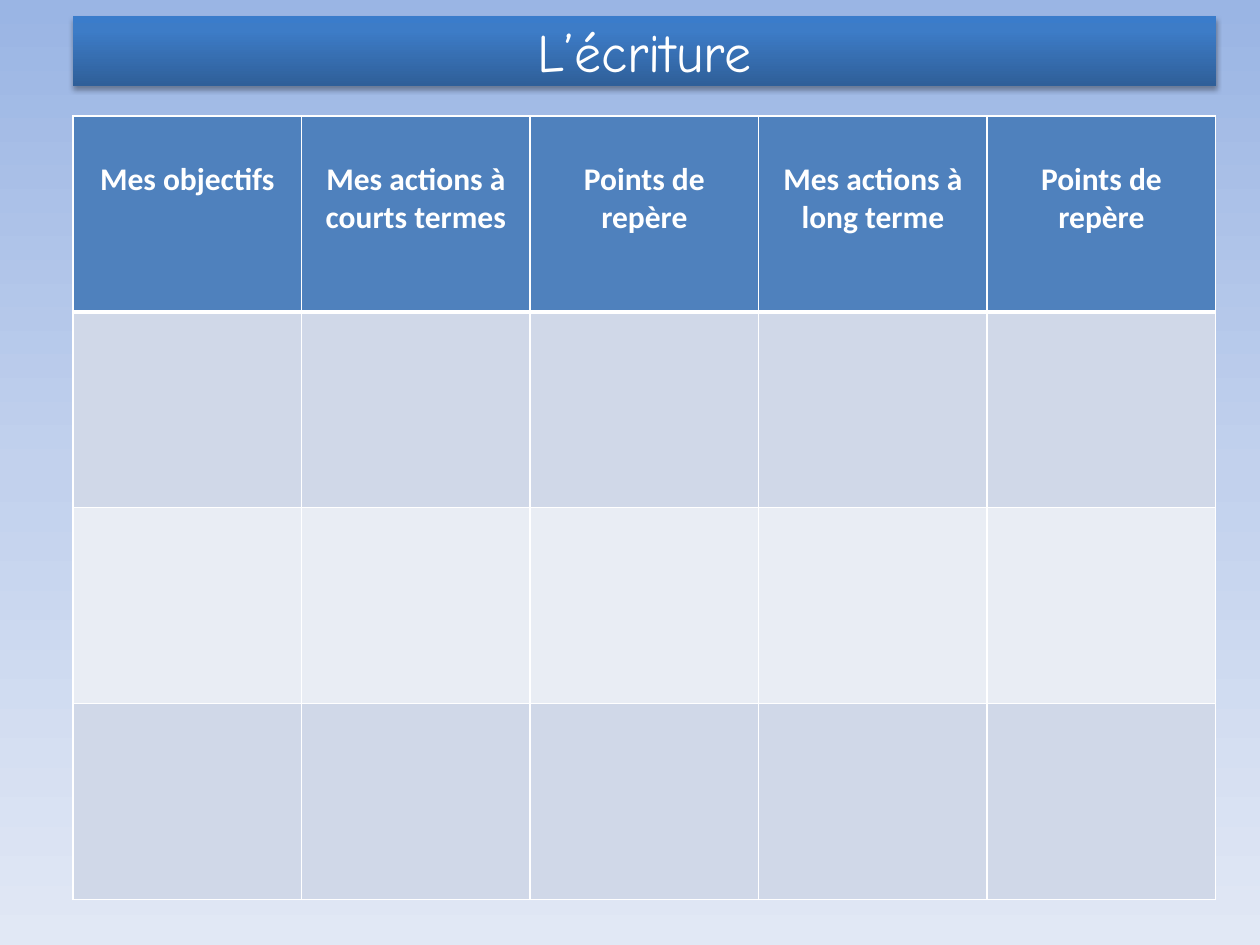
import pptx
import pptx.dml.color
import pptx.enum.shapes
import pptx.enum.text
import pptx.oxml
import pptx.oxml.ns
import pptx.util
from lxml import etree

Inches = pptx.util.Inches
Pt = pptx.util.Pt
qn = pptx.oxml.ns.qn

HEADERS = [
    "Mes objectifs",
    "Mes actions à courts termes",
    "Points de repère",
    "Mes actions à long terme",
    "Points de repère",
]


def color(hex_string):
    return pptx.dml.color.RGBColor.from_string(hex_string)


def add_color(parent, hex_string):
    return etree.SubElement(parent, qn("a:srgbClr"), val=hex_string)


class SlideBuilder:
    white = "FFFFFF"
    header_fill = "4F81BD"
    band_fills = ["D0D8E8", "E9EDF4"]
    title_font = "Comic Neue"
    table_font = "Calibri"

    def __init__(self, presentation):
        self.slide = presentation.slides.add_slide(presentation.slide_layouts[6])

    def gradient(self, fill, element, stops, angle):
        """Fill with (percent, colour) stops; the angle runs clockwise."""
        fill.gradient()
        fill.gradient_angle = (360 - angle) % 360
        stop_list = element.find(".//" + qn("a:gsLst"))
        for old_stop in list(stop_list):
            stop_list.remove(old_stop)
        for percent, hex_string in stops:
            stop = etree.SubElement(stop_list, qn("a:gs"), pos=str(percent * 1000))
            add_color(stop, hex_string)

    def background(self, stops, angle):
        self.gradient(self.slide.background.fill, self.slide.element, stops, angle)

    def shadow(self, shape, blur, distance, opacity):
        shape.shadow.inherit = False
        effects = shape.element.spPr.find(qn("a:effectLst"))
        outer = etree.SubElement(
            effects, qn("a:outerShdw"), blurRad=str(Pt(blur)),
            dist=str(Pt(distance)), dir="5400000", rotWithShape="0")
        etree.SubElement(add_color(outer, "000000"), qn("a:alpha"),
                         val=str(opacity * 1000))

    def text(self, frame, words, font, size, bold=False):
        paragraph = frame.paragraphs[0]
        paragraph.alignment = pptx.enum.text.PP_ALIGN.CENTER
        run = paragraph.add_run()
        run.text = words
        run.font.name = font
        run.font.size = Pt(size)
        run.font.bold = bold
        run.font.color.rgb = color(self.white)

    def banner(self, words, left, top, width, height, stops):
        shape = self.slide.shapes.add_shape(
            pptx.enum.shapes.MSO_SHAPE.RECTANGLE,
            Inches(left), Inches(top), Inches(width), Inches(height))
        self.gradient(shape.fill, shape.element, stops, 270)
        shape.line.fill.background()
        self.shadow(shape, blur=3.1, distance=1.8, opacity=35)
        shape.text_frame.vertical_anchor = pptx.enum.text.MSO_ANCHOR.MIDDLE
        self.text(shape.text_frame, words, self.title_font, 30.8)

    def borders(self, cell, top, bottom):
        properties = cell._tc.get_or_add_tcPr()
        widths = {"a:lnL": 1, "a:lnR": 1, "a:lnT": top, "a:lnB": bottom}
        for position, (tag, width) in enumerate(widths.items()):
            line = etree.Element(qn(tag), w=str(Pt(width)))
            add_color(etree.SubElement(line, qn("a:solidFill")), self.white)
            properties.insert(position, line)

    def table(self, headers, body_rows, left, top, width, height):
        table = self.slide.shapes.add_table(
            body_rows + 1, len(headers),
            Inches(left), Inches(top), Inches(width), Inches(height)).table
        for row_index, row in enumerate(table.rows):
            is_header = row_index == 0
            fill = self.header_fill if is_header else self.band_fills[(row_index - 1) % 2]
            for cell, header in zip(row.cells, headers):
                cell.fill.solid()
                cell.fill.fore_color.rgb = color(fill)
                # A heavy rule separates the header from the body
                self.borders(cell, top=3 if row_index == 1 else 1,
                             bottom=3 if is_header else 1)
                if is_header:
                    cell.margin_top = Inches(0.35)
                    self.text(cell.text_frame, header, self.table_font, 18, bold=True)


def main():
    presentation = pptx.Presentation()
    presentation.slide_width = Inches(10)
    presentation.slide_height = Inches(7.5)
    builder = SlideBuilder(presentation)

    # Background
    builder.background([(0, "9AB5E4"), (50, "C2D1ED"), (100, "E1E8F5")], 90)

    # Title banner
    builder.banner("L’écriture", 0.58, 0.13, 9.07, 0.55,
                   [(0, "2F5F99"), (80, "3D7CC7"), (100, "3A7CCB")])

    # Goals table
    builder.table(HEADERS, 3, 0.58, 0.92, 9.07, 6.22)

    presentation.save("out.pptx")


if __name__ == "__main__":
    main()
